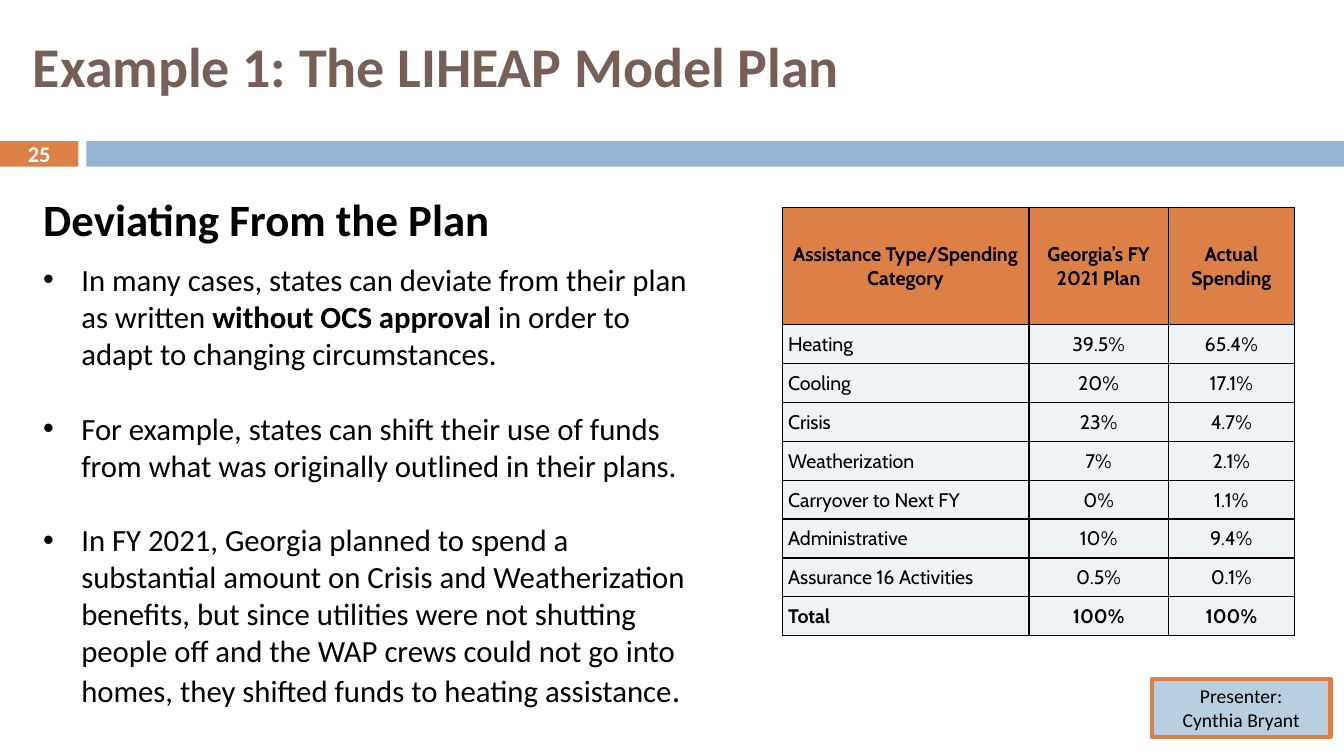
import dataclasses
import typing

import lxml.etree
import pptx
import pptx.dml.color
import pptx.enum.shapes
import pptx.enum.text
import pptx.oxml.ns
import pptx.util

Cm = pptx.util.Cm
Pt = pptx.util.Pt
ALIGN = pptx.enum.text.PP_ALIGN
MIDDLE = pptx.enum.text.MSO_ANCHOR.MIDDLE
TOP = pptx.enum.text.MSO_ANCHOR.TOP

ORANGE, BLUE, BROWN = "DD8047", "94B6D2", "775F55"
PALE, BLACK, WHITE = "EEF3F7", "000000", "FFFFFF"


class Box(typing.NamedTuple):
    """Left, top, width and height in centimetres."""
    left: float
    top: float
    width: float
    height: float

    def lengths(self) -> list:
        return [Cm(value) for value in self]


@dataclasses.dataclass
class Run:
    text: str
    size: float
    bold: bool = False
    color: str = BLACK
    font: str = "Calibri"


@dataclasses.dataclass
class Paragraph:
    runs: list[Run]
    format: dict = dataclasses.field(default_factory=dict)
    indent: float = 0
    bullet: bool = False


CENTER = {"alignment": ALIGN.CENTER}
LEFT = {"alignment": ALIGN.LEFT}

BARS = [(Box(0, 3.56, 1.98, 0.64), ORANGE), (Box(2.18, 3.56, 31.69, 0.64), BLUE)]

TITLE = [Paragraph([Run("Example 1: The LIHEAP Model Plan", 40, True, BROWN)],
                   {"line_spacing": 0.8}, indent=0.3)]
NUMBER = [Paragraph([Run("25", 16, True, WHITE)], CENTER)]
PRESENTER = [Paragraph([Run(line, 14)], CENTER) for line in ("Presenter:", "Cynthia Bryant")]


def bullet_point(runs: list[Run], gap: float) -> Paragraph:
    return Paragraph(runs, {"space_before": Pt(gap)}, indent=0.96, bullet=True)


BODY = [
    Paragraph([Run("Deviating From the Plan", 32, True)]),
    bullet_point([
        Run("In many cases, states can deviate from their plan as written ", 22),
        Run("without OCS approval", 22, True),
        Run(" in order to adapt to changing circumstances.", 22)], 11),
    bullet_point([
        Run("For example, states can shift their use of funds from what was "
            "originally outlined in their plans.", 22)], 27),
    bullet_point([
        Run("In FY 2021, Georgia planned to spend a substantial amount on Crisis and "
            "Weatherization benefits, but since utilities were not shutting people off and "
            "the WAP crews could not go into homes, they shifted funds to heating "
            "assistance", 22),
        Run(".", 24)], 27),
]

SPENDING = [
    ("Assistance Type/Spending Category", "Georgia’s FY 2021 Plan", "Actual Spending"),
    ("Heating", "39.5%", "65.4%"),
    ("Cooling", "20%", "17.1%"),
    ("Crisis", "23%", "4.7%"),
    ("Weatherization", "7%", "2.1%"),
    ("Carryover to Next FY", "0%", "1.1%"),
    ("Administrative", "10%", "9.4%"),
    ("Assurance 16 Activities", "0.5%", "0.1%"),
    ("Total", "100%", "100%"),
]
COLUMN_WIDTHS = [6.22, 3.51, 3.18]
HEADER_HEIGHT, ROW_HEIGHT = 2.95, 0.98


def rgb(color: str) -> pptx.dml.color.RGBColor:
    return pptx.dml.color.RGBColor.from_string(color)


def add_child(parent: typing.Any, tag: str, **attributes: str) -> typing.Any:
    child = lxml.etree.SubElement(parent, pptx.oxml.ns.qn(tag))
    for name, value in attributes.items():
        child.set(name, value)
    return child


def apply(target: typing.Any, values: dict) -> None:
    for name, value in values.items():
        setattr(target, name, value)


def write(frame: typing.Any, paragraphs: list[Paragraph]) -> None:
    for index, content in enumerate(paragraphs):
        paragraph = frame.add_paragraph() if index else frame.paragraphs[0]
        apply(paragraph, content.format)
        properties = paragraph._p.get_or_add_pPr()
        if content.indent:
            properties.set("marL", str(Cm(content.indent)))
        if content.bullet:
            properties.set("indent", str(-Cm(content.indent)))
            add_child(properties, "a:buFont", typeface="Arial")
            add_child(properties, "a:buChar", char="•")
        for piece in content.runs:
            run = paragraph.add_run()
            run.text = piece.text
            apply(run.font, {"name": piece.font, "size": Pt(piece.size), "bold": piece.bold})
            run.font.color.rgb = rgb(piece.color)


def add_text(slide: typing.Any, box: Box, paragraphs: list[Paragraph],
             anchor: typing.Any = TOP) -> None:
    frame = slide.shapes.add_textbox(*box.lengths()).text_frame
    apply(frame, {"word_wrap": True, "vertical_anchor": anchor})
    write(frame, paragraphs)


def add_rectangle(slide: typing.Any, box: Box, fill: str) -> typing.Any:
    shape = slide.shapes.add_shape(pptx.enum.shapes.MSO_SHAPE.RECTANGLE, *box.lengths())
    shape.shadow.inherit = False
    shape.fill.solid()
    shape.fill.fore_color.rgb = rgb(fill)
    shape.line.fill.background()
    return shape


def add_presenter(slide: typing.Any) -> None:
    shape = add_rectangle(slide, Box(29.03, 17.12, 4.5, 1.45), BLUE)
    fill_color = next(shape._element.spPr.iter(pptx.oxml.ns.qn("a:srgbClr")))
    add_child(fill_color, "a:alpha", val="66000")
    shape.line.color.rgb = rgb(ORANGE)
    shape.line.width = Pt(3)
    shape.text_frame.vertical_anchor = TOP
    write(shape.text_frame, PRESENTER)


def style_cell(cell: typing.Any, fill: str) -> None:
    properties = cell._tc.get_or_add_tcPr()
    for side in ("a:lnL", "a:lnR", "a:lnT", "a:lnB"):
        border = add_child(properties, side, w=str(Pt(1)))
        add_child(add_child(border, "a:solidFill"), "a:srgbClr", val=BLACK)
    cell.fill.solid()
    cell.fill.fore_color.rgb = rgb(fill)


def add_spending_table(slide: typing.Any) -> None:
    heights = [HEADER_HEIGHT] + [ROW_HEIGHT] * (len(SPENDING) - 1)
    box = Box(19.71, 5.23, sum(COLUMN_WIDTHS), sum(heights))
    table = slide.shapes.add_table(len(heights), len(COLUMN_WIDTHS), *box.lengths()).table
    table.horz_banding = False
    for column, width in zip(table.columns, COLUMN_WIDTHS):
        column.width = Cm(width)
    for row_index, (row, height, texts) in enumerate(zip(table.rows, heights, SPENDING)):
        row.height = Cm(height)
        header = row_index == 0
        bold = header or texts[0] == "Total"
        for column_index, (cell, text) in enumerate(zip(row.cells, texts)):
            label = column_index == 0 and not header
            style_cell(cell, ORANGE if header else PALE)
            apply(cell, {"vertical_anchor": MIDDLE, "margin_left": Cm(0.15 if label else 0.02),
                         "margin_right": Cm(0.02), "margin_top": Cm(0.02), "margin_bottom": 0})
            write(cell.text_frame, [Paragraph([Run(text, 14, bold, font="Cabin")],
                                              LEFT if label else CENTER)])


def main() -> None:
    presentation = pptx.Presentation()
    apply(presentation, {"slide_width": Cm(33.87), "slide_height": Cm(19.05)})
    slide = presentation.slides.add_slide(presentation.slide_layouts[6])
    for box, color in BARS:
        add_rectangle(slide, box, color)
    add_text(slide, Box(0.28, 0.43, 33.5, 2.74), TITLE, MIDDLE)
    add_text(slide, Box(0, 3.53, 1.98, 0.69), NUMBER, MIDDLE)
    add_presenter(slide)
    add_text(slide, Box(0.84, 4.7, 16.92, 14.3), BODY)
    add_spending_table(slide)
    presentation.save("out.pptx")


if __name__ == "__main__":
    main()
